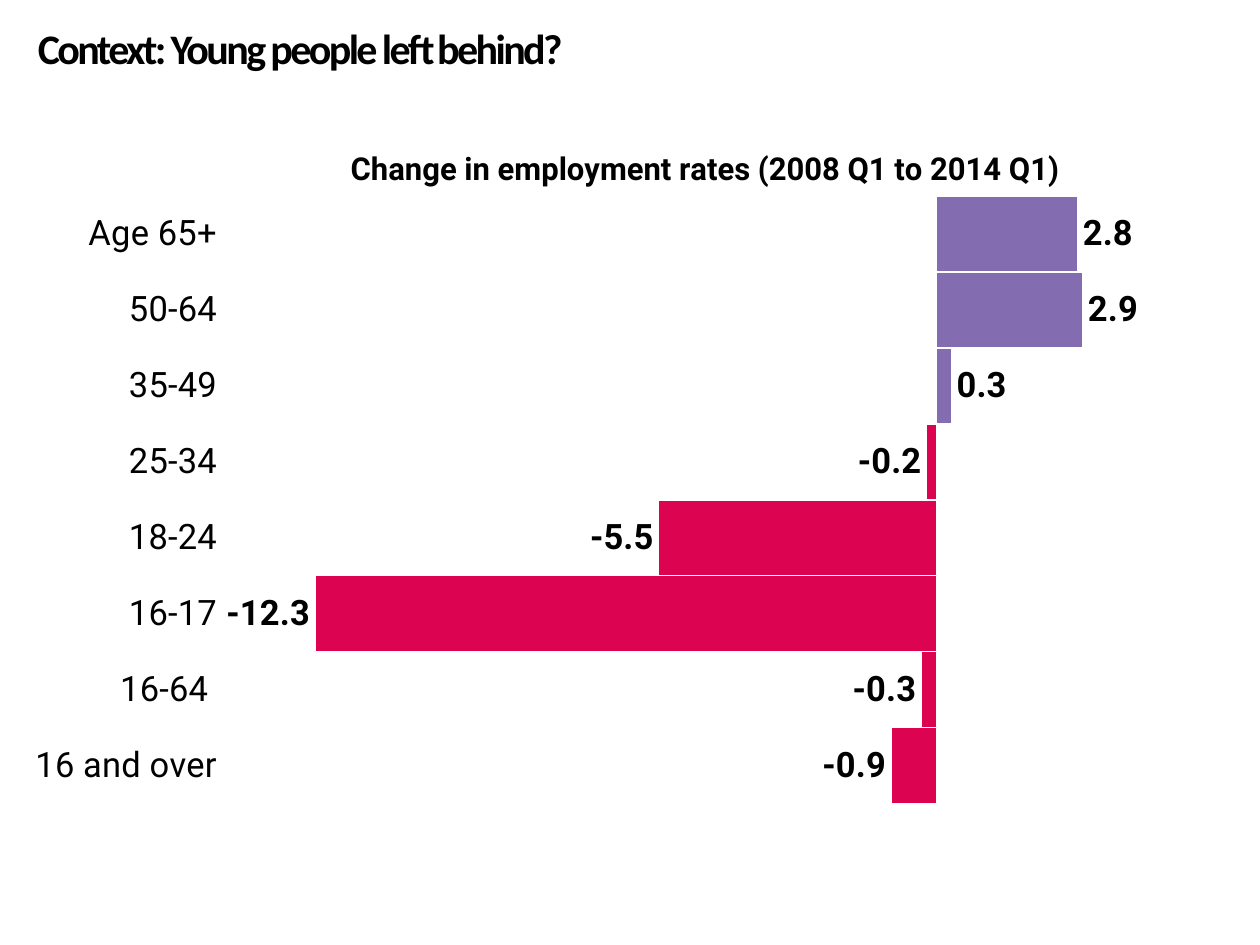
from dataclasses import dataclass

from lxml.etree import SubElement
from pptx import Presentation
from pptx.chart.data import CategoryChartData
from pptx.dml.color import RGBColor
from pptx.enum.chart import (
    XL_CHART_TYPE as ChartType,
    XL_LABEL_POSITION as LabelPosition,
    XL_TICK_LABEL_POSITION as TickLabelPosition,
    XL_TICK_MARK as TickMark,
)
from pptx.enum.text import MSO_ANCHOR as Anchor, PP_ALIGN as Align
from pptx.oxml.ns import qn
from pptx.util import Pt


@dataclass(frozen=True)
class Theme:
    text: RGBColor = RGBColor(0x00, 0x00, 0x00)
    outline: RGBColor = RGBColor(0xFF, 0xFF, 0xFF)
    fall: RGBColor = RGBColor(0xDC, 0x04, 0x51)
    rise: RGBColor = RGBColor(0x83, 0x6D, 0xB0)
    heading_font: str = "Calibri"
    chart_font: str = "Roboto"
    heading_size: int = 24
    chart_title_size: int = 18
    label_size: int = 20
    base_size: int = 10


THEME = Theme()
EMPLOYMENT_CHANGE = {
    "16 and over": -0.9,
    "16-64 ": -0.3,
    "16-17": -12.3,
    "18-24": -5.5,
    "25-34": -0.2,
    "35-49": 0.3,
    "50-64": 2.9,
    "Age 65+": 2.8,
}


def format_font(font, name, size, bold=False):
    font.name = name
    font.size = Pt(size)
    font.bold = bold
    font.color.rgb = THEME.text


def set_layout(parent, position, **settings):
    """Place a chart part by fractions of the chart area."""
    for old_layout in parent.findall(qn("c:layout")):
        parent.remove(old_layout)
    layout = SubElement(parent, qn("c:layout"))
    manual = SubElement(layout, qn("c:manualLayout"))
    for name, value in settings.items():
        SubElement(manual, qn(f"c:{name}")).set("val", str(value))
    parent.insert(position, layout)


def add_heading(slide, text):
    title = slide.shapes.title
    title.left, title.top = Pt(14.4), Pt(9.4)
    title.width, title.height = Pt(692), Pt(36)
    frame = title.text_frame
    frame.word_wrap = True
    frame.vertical_anchor = Anchor.MIDDLE
    paragraph = frame.paragraphs[0]
    paragraph.alignment = Align.LEFT
    run = paragraph.add_run()
    run.text = text
    format_font(run.font, THEME.heading_font, THEME.heading_size, bold=True)
    run._r.get_or_add_rPr().set("spc", "-150")


def format_chart_title(chart, text):
    chart.has_title = True
    title = chart.chart_title
    run = title.text_frame.paragraphs[0].add_run()
    run.text = text
    format_font(run.font, THEME.chart_font, THEME.chart_title_size, bold=True)
    set_layout(title._element, 1, xMode="edge", yMode="edge", x=0.26, y=0.05)


def format_axes(chart):
    categories = chart.category_axis
    categories.tick_label_position = TickLabelPosition.LOW
    categories.major_tick_mark = TickMark.OUTSIDE
    categories.format.line.fill.background()
    format_font(categories.tick_labels.font, THEME.chart_font, THEME.label_size)

    values = chart.value_axis
    values.minimum_scale, values.maximum_scale = -14, 4
    values.has_major_gridlines = False
    values.visible = False


def format_bars(plot):
    plot.gap_width = 0
    plot.vary_by_categories = False
    series = plot.series[0]
    series.invert_if_negative = False
    series.format.fill.solid()
    series.format.fill.fore_color.rgb = THEME.fall

    # Rises stand out from falls
    for index, value in enumerate(EMPLOYMENT_CHANGE.values()):
        if value > 0:
            point_fill = series.points[index].format.fill
            point_fill.solid()
            point_fill.fore_color.rgb = THEME.rise
            outline_bar(series.points[index])
    outline_bar(series)

    labels = series.data_labels
    labels.show_value = True
    labels.position = LabelPosition.OUTSIDE_END
    labels.number_format = "0.0"
    labels.number_format_is_linked = False
    format_font(labels.font, THEME.chart_font, THEME.label_size, bold=True)


def outline_bar(bar):
    bar.format.line.color.rgb = THEME.outline
    bar.format.line.width = Pt(0.75)


def add_employment_chart(slide):
    data = CategoryChartData(number_format="0.0")
    data.categories = list(EMPLOYMENT_CHANGE)
    data.add_series("Series 1", list(EMPLOYMENT_CHANGE.values()))
    chart = slide.shapes.add_chart(
        ChartType.BAR_CLUSTERED, Pt(20.2), Pt(60.5), Pt(652.3), Pt(419.8), data
    ).chart
    chart.has_legend = False
    format_font(chart.font, THEME.chart_font, THEME.base_size)
    format_chart_title(chart, "Change in employment rates (2008 Q1 to 2014 Q1) ")
    format_axes(chart)
    format_bars(chart.plots[0])
    plot_area = chart._chartSpace.find(f".//{qn('c:plotArea')}")
    set_layout(plot_area, 0, layoutTarget="inner", xMode="edge", yMode="edge",
               x=0.157, y=0.123, w=0.809, h=0.827)


def main():
    presentation = Presentation()
    presentation.slide_width, presentation.slide_height = Pt(720), Pt(540)
    title_only = presentation.slide_layouts[5]
    slide = presentation.slides.add_slide(title_only)

    # Heading
    add_heading(slide, "Context: Young people left behind?")

    # Employment rates by age group
    add_employment_chart(slide)

    presentation.save("out.pptx")


if __name__ == "__main__":
    main()
